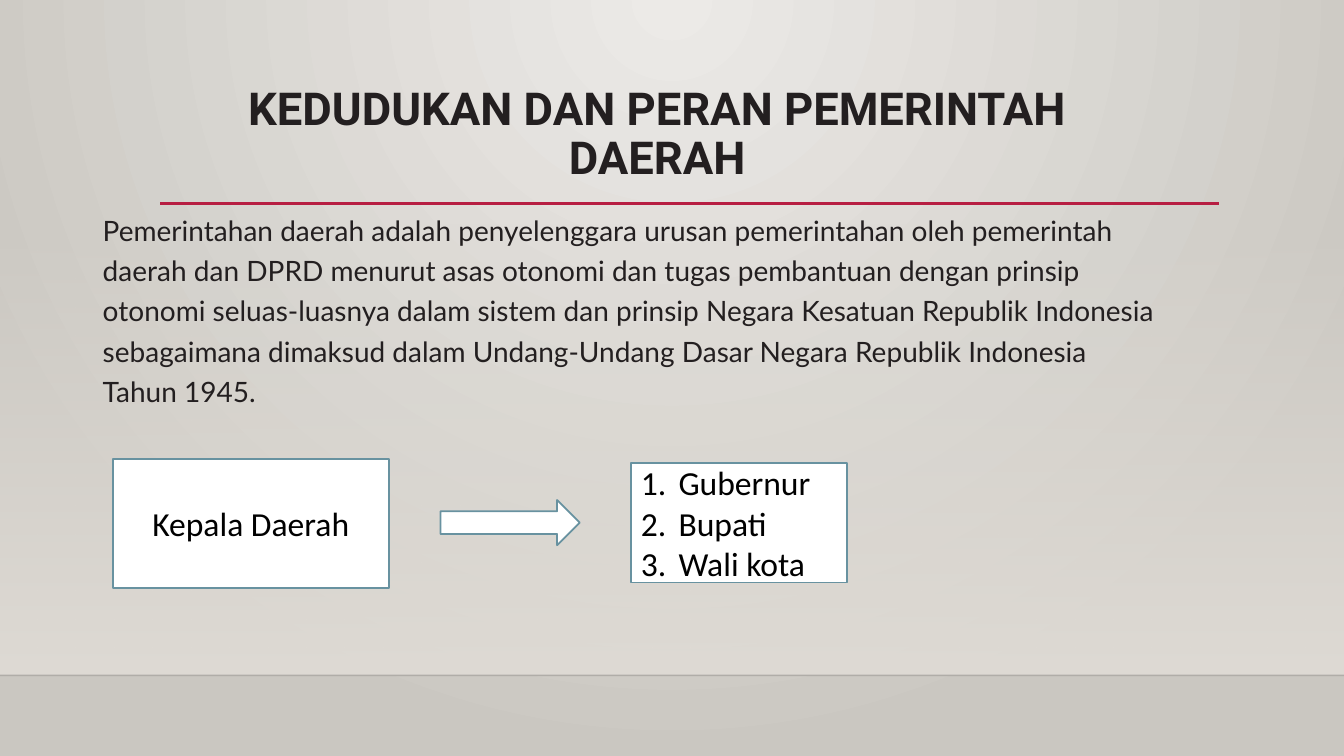
"""Build a slide on the position and role of regional government."""
from dataclasses import dataclass

from lxml.etree import SubElement
from pptx import Presentation
from pptx.dml.color import RGBColor
from pptx.enum.shapes import MSO_CONNECTOR, MSO_SHAPE
from pptx.enum.text import MSO_ANCHOR as Anchor, PP_ALIGN as Align
from pptx.oxml.ns import qn
from pptx.util import Cm, Pt

COLORS = {
    "glow": "ECEAE7",
    "edge": "CAC7C1",
    "wall": "DFDBD5",
    "floor_line": "000000",
    "accent": "B71E42",
    "heading": "231F20",
    "white": "FFFFFF",
    "outline": "6892A0",
    "black": "000000",
}
WIDTH, HEIGHT = 33.87, 19.05
FLOOR = 17.02


@dataclass(frozen=True)
class Area:
    left: float
    top: float
    width: float
    height: float

    def lengths(self) -> tuple:
        return Cm(self.left), Cm(self.top), Cm(self.width), Cm(self.height)


@dataclass(frozen=True)
class Rule:
    start: float
    end: float
    y: float
    color: str
    weight: float
    opacity: int = 100


@dataclass(frozen=True)
class Block:
    area: Area
    preset: MSO_SHAPE
    lines: tuple = ()
    numbered: bool = False


RULES = (
    Rule(0, WIDTH, FLOOR, "floor_line", 1, 20),
    Rule(4.04, 30.73, 5.13, "accent", 2.5),
)
BLOCKS = (
    Block(Area(2.84, 11.56, 6.96, 3.25), MSO_SHAPE.RECTANGLE, ("Kepala Daerah",)),
    Block(Area(15.9, 11.66, 5.44, 3.02), MSO_SHAPE.RECTANGLE,
          ("Gubernur", "Bupati", "Wali kota"), numbered=True),
    Block(Area(11.1, 12.6, 3.51, 1.14), MSO_SHAPE.RIGHT_ARROW),
)
TITLE = "KEDUDUKAN DAN PERAN PEMERINTAH DAERAH"
BODY = (
    "Pemerintahan daerah adalah penyelenggara urusan pemerintahan oleh "
    "pemerintah daerah dan DPRD menurut asas otonomi dan tugas pembantuan "
    "dengan prinsip otonomi seluas-luasnya dalam sistem dan prinsip Negara "
    "Kesatuan Republik Indonesia sebagaimana dimaksud dalam Undang-Undang "
    "Dasar Negara Republik Indonesia Tahun 1945."
)


def rgb(name: str) -> RGBColor:
    return RGBColor.from_string(COLORS[name])


def set_opacity(element, percent: int) -> None:
    color = element.xpath(".//a:srgbClr")[0]
    SubElement(color, qn("a:alpha"), val=str(percent * 1000))


def set_gradient(fill, *names: str) -> None:
    fill.gradient()
    for stop, name in zip(fill.gradient_stops, names):
        stop.color.rgb = rgb(name)


def add_background(slide) -> None:
    set_gradient(slide.background.fill, "glow", "edge")
    gradient = slide._element.xpath(".//p:bg//a:gradFill")[0]
    linear = gradient.find(qn("a:lin"))
    circle = SubElement(gradient, qn("a:path"), path="circle")
    SubElement(circle, qn("a:fillToRect"), l="43000", t="0", r="43000", b="100000")
    gradient.replace(linear, circle)


def add_wall(slide) -> None:
    area = Area(0, 5.61, WIDTH, FLOOR - 5.61)
    wall = slide.shapes.add_shape(MSO_SHAPE.RECTANGLE, *area.lengths())
    wall.shadow.inherit = False
    wall.line.fill.background()
    set_gradient(wall.fill, "wall", "wall")
    wall.fill.gradient_angle = 270
    set_opacity(wall._element, 0)


def add_rule(slide, rule: Rule) -> None:
    line = slide.shapes.add_connector(
        MSO_CONNECTOR.STRAIGHT,
        Cm(rule.start), Cm(rule.y), Cm(rule.end), Cm(rule.y))
    line.line.color.rgb = rgb(rule.color)
    line.line.width = Pt(rule.weight)
    if rule.opacity < 100:
        set_opacity(line._element, rule.opacity)
    SubElement(line._element.spPr, qn("a:effectLst"))


def write_text(box, *lines: str, font: str, size: float, color: str,
               bold: bool = False, align: Align = Align.LEFT,
               anchor: Anchor = Anchor.TOP, spacing: float = 1.0,
               numbered: bool = False) -> None:
    frame = box.text_frame
    frame.word_wrap = True
    frame.vertical_anchor = anchor
    for index, line in enumerate(lines):
        para = frame.add_paragraph() if index else frame.paragraphs[0]
        para.alignment = align
        para.line_spacing = spacing
        if numbered:
            properties = para._p.get_or_add_pPr()
            properties.set("marL", str(Cm(0.95)))
            properties.set("indent", str(-Cm(0.95)))
            SubElement(properties, qn("a:buAutoNum"), type="arabicPeriod")
        span = para.add_run()
        span.text = line
        span.font.name = font
        span.font.size = Pt(size)
        span.font.bold = bold
        span.font.color.rgb = rgb(color)


def add_block(slide, block: Block) -> None:
    shape = slide.shapes.add_shape(block.preset, *block.area.lengths())
    shape.shadow.inherit = False
    shape.fill.solid()
    shape.fill.fore_color.rgb = rgb("white")
    shape.line.color.rgb = rgb("outline")
    shape.line.width = Pt(1.25)
    write_text(shape, *block.lines, font="Calibri", size=24, color="black",
               align=Align.LEFT if block.numbered else Align.CENTER,
               anchor=Anchor.MIDDLE, numbered=block.numbered)


def main() -> None:
    deck = Presentation()
    deck.slide_width, deck.slide_height = Cm(WIDTH), Cm(HEIGHT)
    page = deck.slides.add_slide(deck.slide_layouts[6])
    add_background(page)
    add_wall(page)
    for rule in RULES:
        add_rule(page, rule)
    title = page.shapes.add_textbox(*Area(4.42, 2.06, 24.28, 2.41).lengths())
    write_text(title, TITLE, font="Roboto", size=32.4, color="heading",
               bold=True, align=Align.CENTER, spacing=0.9)
    body = page.shapes.add_textbox(*Area(2.34, 5.08, 27.15, 5.49).lengths())
    write_text(body, BODY, font="Lato", size=20, color="heading", spacing=1.2)
    for block in BLOCKS:
        add_block(page, block)
    deck.save("out.pptx")


if __name__ == "__main__":
    main()
